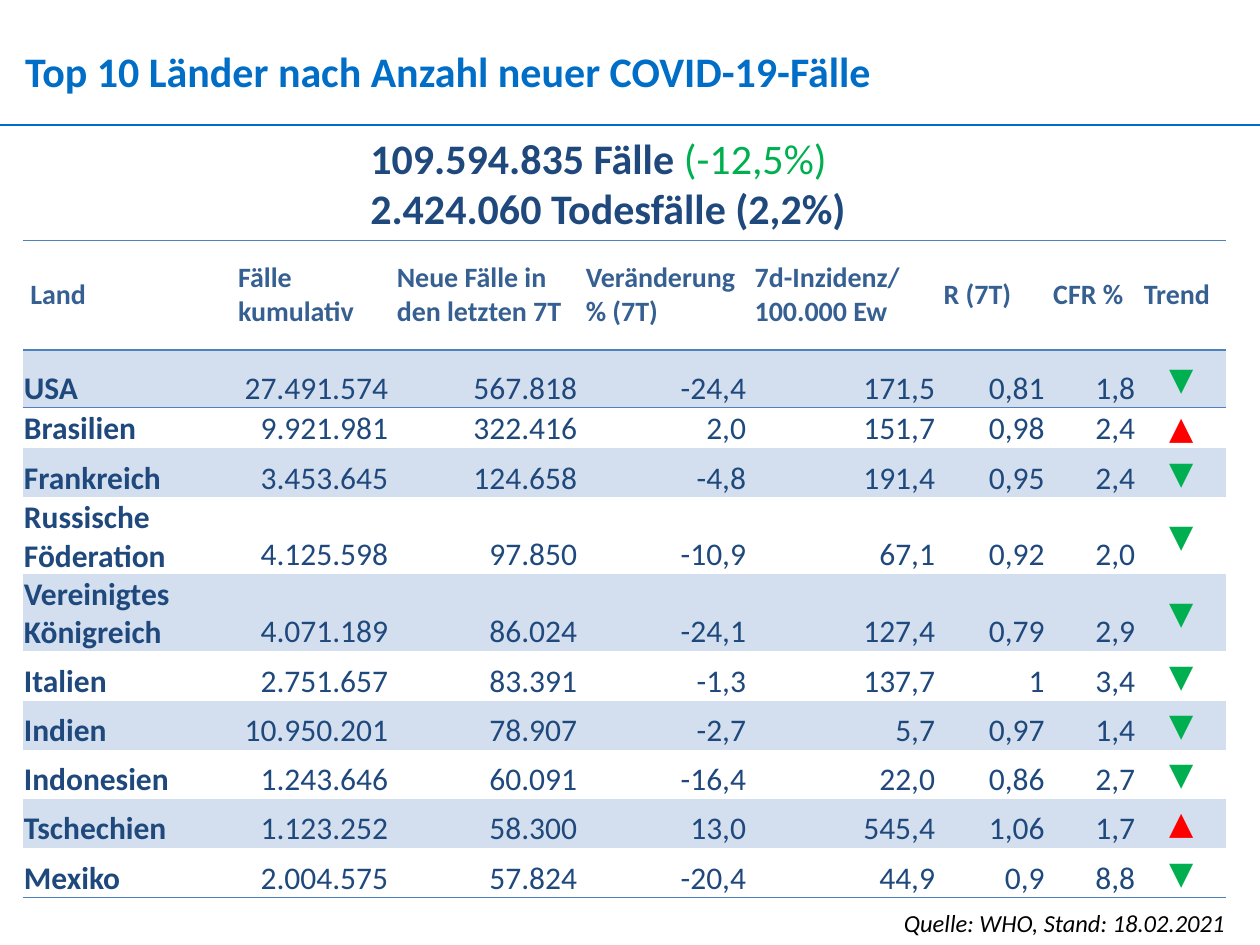
"""Builds a slide with the ten countries reporting the most new COVID-19 cases."""
from lxml.etree import SubElement
from pptx import Presentation
from pptx.dml.color import RGBColor
from pptx.enum.shapes import MSO_CONNECTOR as Connector
from pptx.enum.text import MSO_ANCHOR as Anchor, MSO_AUTO_SIZE as AutoSize, PP_ALIGN as Align
from pptx.oxml import parse_xml
from pptx.oxml.ns import nsdecls, qn
from pptx.util import Pt

BLUE, NAVY, HEADER_BLUE, RULE_BLUE = "006EC7", "1F497D", "366092", "4F81BD"
GREEN, RED, BLACK, BAND = "00B050", "FF0000", "000000", "D3DFEE"
NO_STYLE = "{2D5ABB26-0587-4C30-8999-92F81FD0307C}"

TITLE = [[("Top 10 Länder nach Anzahl neuer COVID-19-Fälle", BLUE, {"bold": True})]]
SUMMARY = [
    [("109.594.835 Fälle ", NAVY, {"bold": True}), ("(-12,5%)", GREEN, {"bold": False})],
    [("2.424.060 Todesfälle (2,2%)", NAVY, {"bold": True})],
]
SOURCE = [[("Quelle: WHO, Stand: 18.02.2021", BLACK, {"italic": True})]]

COLUMNS = [
    ("Land", 118.8), ("Fälle kumulativ", 90.7), ("Neue Fälle in den letzten 7T", 108),
    ("Veränderung % (7T)", 96.5), ("7d-Inzidenz/ 100.000 Ew", 108),
    ("R (7T)", 62.6), ("CFR %", 51.8), ("Trend", 51.1),
]
HEADER_HEIGHT = 62.6
COUNTRIES = [
    (33.1, "USA", "27.491.574", "567.818", "-24,4", "171,5", "0,81", "1,8", "▼"),
    (23, "Brasilien", "9.921.981", "322.416", "2,0", "151,7", "0,98", "2,4", "▲"),
    (28.3, "Frankreich", "3.453.645", "124.658", "-4,8", "191,4", "0,95", "2,4", "▼"),
    (43.8, "Russische Föderation", "4.125.598", "97.850", "-10,9", "67,1", "0,92", "2,0", "▼"),
    (43.8, "Vereinigtes Königreich", "4.071.189", "86.024", "-24,1", "127,4", "0,79", "2,9", "▼"),
    (28.3, "Italien", "2.751.657", "83.391", "-1,3", "137,7", "1", "3,4", "▼"),
    (28.2, "Indien", "10.950.201", "78.907", "-2,7", "5,7", "0,97", "1,4", "▼"),
    (28, "Indonesien", "1.243.646", "60.091", "-16,4", "22,0", "0,86", "2,7", "▼"),
    (28.2, "Tschechien", "1.123.252", "58.300", "13,0", "545,4", "1,06", "1,7", "▲"),
    (28.2, "Mexiko", "2.004.575", "57.824", "-20,4", "44,9", "0,9", "8,8", "▼"),
]
TREND_COLORS = {"▼": GREEN, "▲": RED}


def rgb(color):
    return RGBColor.from_string(color)


def apply(target, values):
    for name, value in values.items():
        setattr(target, name, value)


def write(frame, paragraphs, size, align=Align.LEFT):
    for index, runs in enumerate(paragraphs):
        paragraph = frame.add_paragraph() if index else frame.paragraphs[0]
        paragraph.alignment = align
        for text, color, style in runs:
            run = paragraph.add_run()
            run.text = text
            apply(run.font, {"name": "Calibri", "size": Pt(size), **style})
            run.font.color.rgb = rgb(color)


def add_text(slide, box, paragraphs, size, align=Align.LEFT, **frame_format):
    frame = slide.shapes.add_textbox(*map(Pt, box)).text_frame
    apply(frame, {"word_wrap": True, "auto_size": AutoSize.SHAPE_TO_FIT_TEXT, **frame_format})
    write(frame, paragraphs, size, align)


def add_title_rule(slide):
    rule = slide.shapes.add_connector(Connector.STRAIGHT, Pt(0), Pt(71.5), Pt(720), Pt(71.5))
    rule.line.width = Pt(1.5)
    rule.line.color.rgb = rgb(BLUE)
    SubElement(rule._element.spPr, qn("a:effectLst"))


def set_borders(cell, sides):
    for index, side in enumerate(sides):
        border = parse_xml(
            f'<a:ln{side} {nsdecls("a")} w="12700"><a:solidFill>'
            f'<a:srgbClr val="{RULE_BLUE}"/></a:solidFill></a:ln{side}>'
        )
        cell._tc.get_or_add_tcPr().insert(index, border)


def fill_cell(cell, text, size, color, bold, align, fill=None, borders="", **cell_format):
    apply(cell, cell_format)
    write(cell.text_frame, [[(text, color, {"bold": bold})]], size, align)
    if fill:
        cell.fill.solid()
        cell.fill.fore_color.rgb = rgb(fill)
    else:
        cell.fill.background()
    set_borders(cell, borders)


def add_country_table(slide):
    heights = [HEADER_HEIGHT] + [country[0] for country in COUNTRIES]
    widths = [width for _, width in COLUMNS]
    shape = slide.shapes.add_table(
        len(heights), len(widths), Pt(13), Pt(137.3), Pt(sum(widths)), Pt(sum(heights))
    )
    table = shape.table
    table._tbl.tblPr.find(qn("a:tableStyleId")).text = NO_STYLE
    apply(table, {"first_row": False, "horz_banding": False})
    for column, width in zip(table.columns, widths):
        column.width = Pt(width)
    for row, height in zip(table.rows, heights):
        row.height = Pt(height)

    header_format = {
        "vertical_anchor": Anchor.MIDDLE, "margin_left": Pt(4.3), "margin_right": Pt(4.3),
        "margin_top": 0, "margin_bottom": 0,
    }
    for index, (label, _) in enumerate(COLUMNS):
        fill_cell(table.cell(0, index), label, 16, HEADER_BLUE, True, Align.LEFT,
                  borders="TB", **header_format)

    margins = {"margin_left": Pt(0.7), "margin_right": Pt(0.7),
               "margin_top": Pt(0.7), "margin_bottom": 0}
    for row, (_, *values) in enumerate(COUNTRIES, 1):
        borders = {1: "T", len(COUNTRIES): "B"}.get(row, "")
        for column, value in enumerate(values):
            is_trend = value in TREND_COLORS
            align = Align.CENTER if is_trend else Align.RIGHT if column else Align.LEFT
            fill_cell(table.cell(row, column), value, 18, TREND_COLORS.get(value, NAVY),
                      column == 0, align, BAND if row % 2 else None, borders,
                      vertical_anchor=Anchor.MIDDLE if is_trend else Anchor.BOTTOM, **margins)


def main():
    presentation = Presentation()
    apply(presentation, {"slide_width": Pt(720), "slide_height": Pt(540)})
    slide = presentation.slides.add_slide(presentation.slide_layouts[6])
    add_text(slide, (14.4, 26, 693.4, 29), TITLE, 24,
             margin_left=0, margin_right=0, margin_top=0, margin_bottom=0)
    add_title_rule(slide)
    add_text(slide, (204.5, 72, 288.7, 65.5), SUMMARY, 24, word_wrap=False)
    add_text(slide, (452.2, 515.5, 254.9, 24.2), SOURCE, 14, Align.RIGHT)
    add_country_table(slide)
    presentation.save("out.pptx")


if __name__ == "__main__":
    main()
